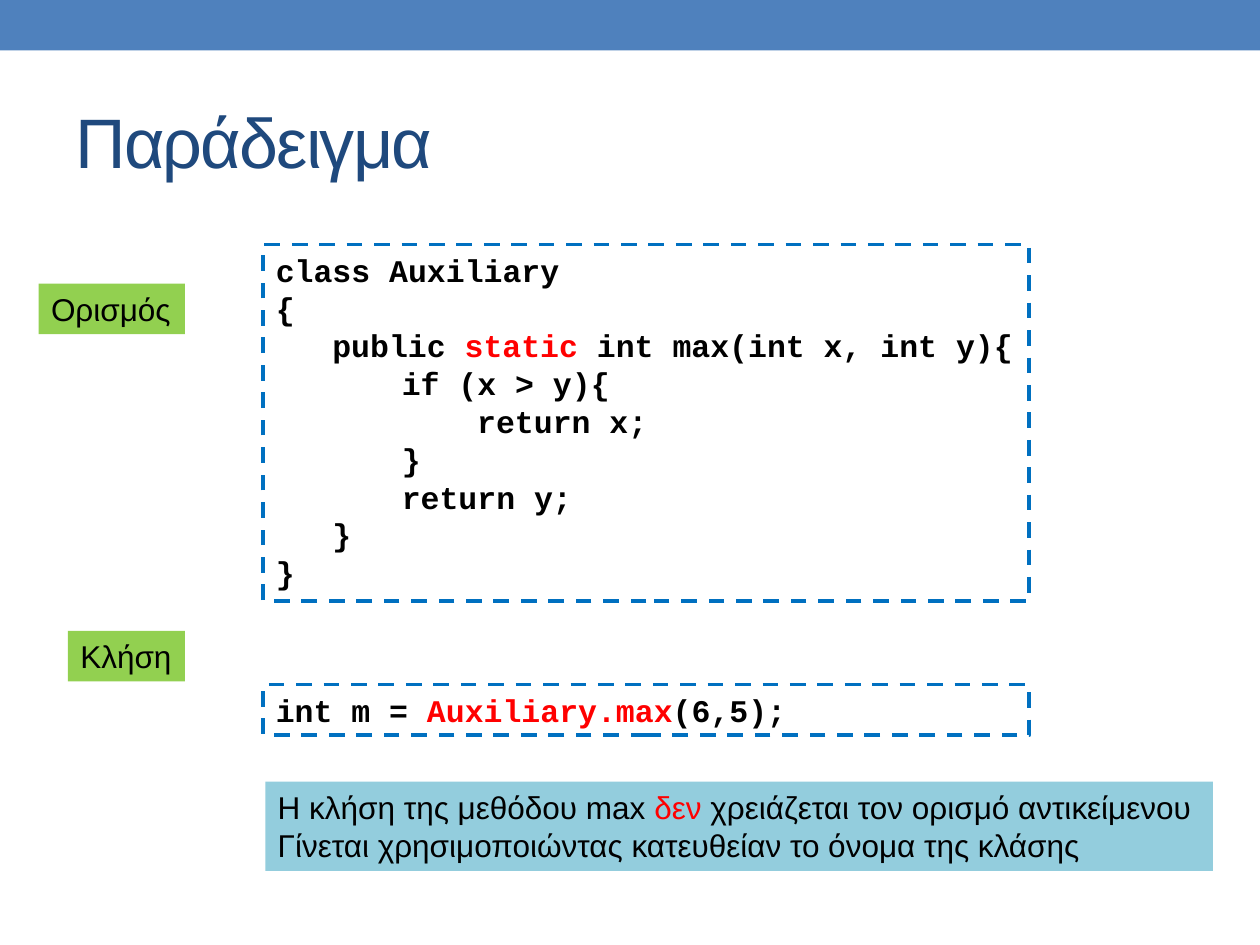
import pptx
import pptx.dml.color
import pptx.enum.dml
import pptx.enum.shapes
import pptx.enum.text
import pptx.util
from pptx.util import Cm

COLORS = {
    "banner": "4F81BD",
    "title": "1F497D",
    "text": "000000",
    "accent": "FF0000",
    "border": "0070C0",
    "label": "92D050",
    "remark": "93CDDD",
}
BODY = {"name": "Arial", "size": pptx.util.Pt(18)}
CODE = {"name": "Courier New", "size": pptx.util.Pt(18), "bold": True}
TITLE = {"name": "Arial", "size": pptx.util.Pt(40)}

CODE_LEFT, CODE_WIDTH = Cm(5.31), Cm(15.44)
LABEL_RIGHT = Cm(3.73)
LINE_BOX_HEIGHT = Cm(1.02)
METHOD, BLOCK, NESTED = Cm(1.14), Cm(2.54), Cm(4.06)

# Each line is an indent followed by (text, colour) pieces.
DEFINITION = [
    (0, ("class Auxiliary", "text")),
    (0, ("{", "text")),
    (METHOD, ("public ", "text"), ("static", "accent"),
     (" int max(int x, int y){", "text")),
    (BLOCK, ("if (x > y){", "text")),
    (NESTED, ("return x;", "text")),
    (BLOCK, ("}", "text")),
    (BLOCK, ("return y;", "text")),
    (METHOD, ("}", "text")),
    (0, ("}", "text")),
]
CALL = [(0, ("int m = ", "text"), ("Auxiliary.max", "accent"), ("(6,5);", "text"))]
REMARK = [
    (0, ("Η κλήση της μεθόδου max ", "text"), ("δεν", "accent"),
     (" χρειάζεται τον ορισμό αντικείμενου", "text")),
    (0, ("Γίνεται χρησιμοποιώντας κατευθείαν το όνομα της κλάσης", "text")),
]


def rgb(name):
    return pptx.dml.color.RGBColor.from_string(COLORS[name])


def write_lines(frame, lines, font_format):
    for number, (indent, *pieces) in enumerate(lines):
        paragraph = frame.add_paragraph() if number else frame.paragraphs[0]
        paragraph.alignment = pptx.enum.text.PP_ALIGN.LEFT
        if indent:
            paragraph._p.get_or_add_pPr().set("marL", str(int(indent)))
        for text, color in pieces:
            run = paragraph.add_run()
            run.text = text
            for attribute, value in font_format.items():
                setattr(run.font, attribute, value)
            run.font.color.rgb = rgb(color)


def add_panel(slide, left, top, width, height, fill=None):
    panel = slide.shapes.add_shape(
        pptx.enum.shapes.MSO_SHAPE.RECTANGLE, left, top, width, height)
    panel.shadow.inherit = False
    panel.line.fill.background()
    if fill:
        panel.fill.solid()
        panel.fill.fore_color.rgb = rgb(fill)
    else:
        panel.fill.background()
    return panel


def add_text_panel(slide, box, lines, font_format, fill=None, wrap=False):
    panel = add_panel(slide, *box, fill)
    panel.text_frame.word_wrap = wrap
    panel.text_frame.vertical_anchor = pptx.enum.text.MSO_ANCHOR.TOP
    write_lines(panel.text_frame, lines, font_format)
    return panel


def add_code(slide, top, height, lines, wrap=False):
    code = add_text_panel(
        slide, (CODE_LEFT, top, CODE_WIDTH, height), lines, CODE, wrap=wrap)
    border = {"width": pptx.util.Pt(2.25),
              "dash_style": pptx.enum.dml.MSO_LINE.DASH}
    code.line.color.rgb = rgb("border")
    for attribute, value in border.items():
        setattr(code.line, attribute, value)


def add_label(slide, text, top, width):
    """Add a green label that ends at the common right edge."""
    box = (LABEL_RIGHT - width, top, width, LINE_BOX_HEIGHT)
    add_text_panel(slide, box, [(0, (text, "text"))], BODY, "label")


def add_title(slide, text):
    title = slide.shapes.add_textbox(Cm(1.27), Cm(1.47), Cm(22.86), Cm(2.74))
    frame = title.text_frame
    frame.word_wrap = True
    frame.vertical_anchor = pptx.enum.text.MSO_ANCHOR.MIDDLE
    write_lines(frame, [(0, (text, "title"))], TITLE)
    frame.paragraphs[0].runs[0]._r.get_or_add_rPr().set("spc", "-100")


def main():
    deck = pptx.Presentation()
    deck.slide_width, deck.slide_height = Cm(25.4), Cm(19.05)
    slide = deck.slides.add_slide(deck.slide_layouts[6])

    add_panel(slide, 0, 0, deck.slide_width, Cm(1.02), "banner")
    add_title(slide, "Παράδειγμα")
    add_code(slide, Cm(4.93), Cm(7.19), DEFINITION)
    add_code(slide, Cm(13.8), LINE_BOX_HEIGHT, CALL, wrap=True)
    add_label(slide, "Ορισμός", Cm(5.72), Cm(2.95))
    add_label(slide, "Κλήση", Cm(12.72), Cm(2.36))
    add_text_panel(slide, (Cm(5.35), Cm(15.76), Cm(19.1), Cm(1.8)),
                   REMARK, BODY, "remark")

    deck.save("out.pptx")


if __name__ == "__main__":
    main()
